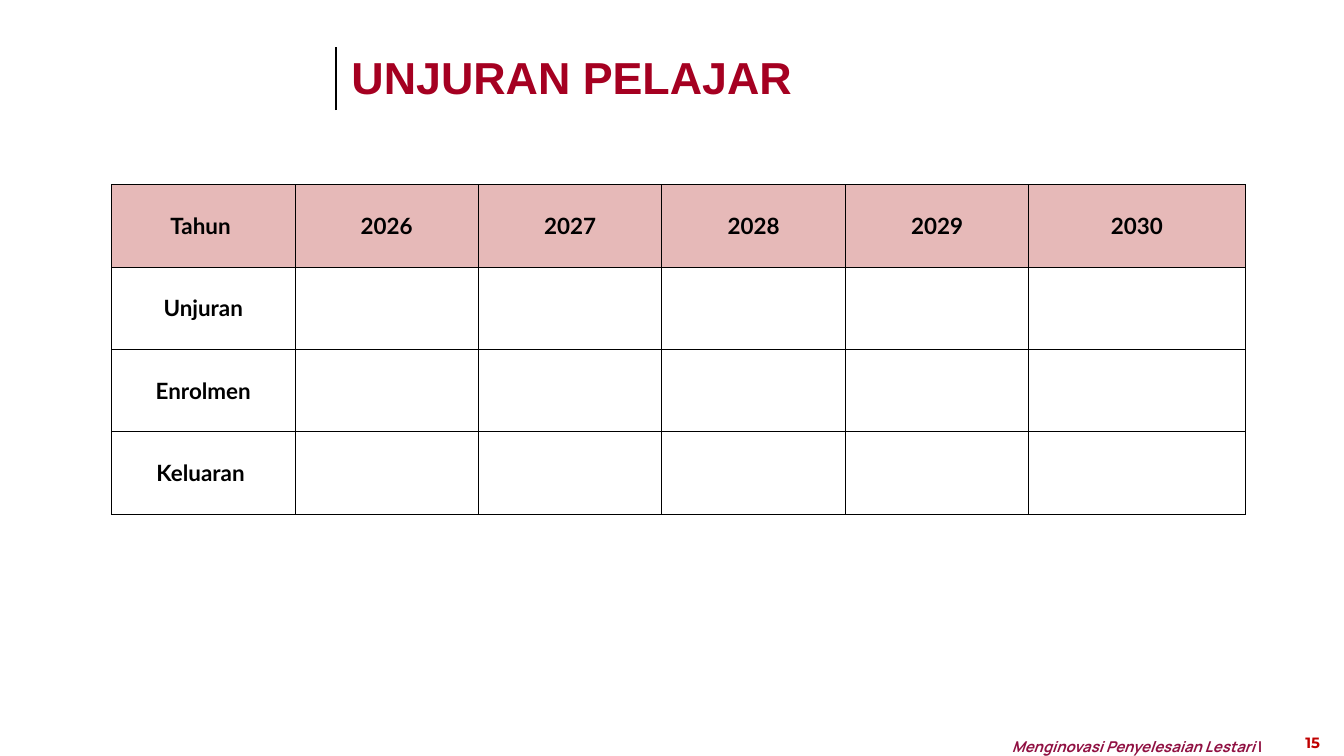
from lxml import etree
from pptx import Presentation
from pptx import util as u
from pptx.dml.color import RGBColor
from pptx.enum import shapes, text
from pptx.oxml import ns

BLACK = "000000"
HEADER_FILL = "E6B9B8"
TITLE_FONT = {"name": "Arial", "size": u.Pt(48), "bold": True}
TABLE_FONT = {"name": "Lato", "size": u.Pt(24), "bold": True}
MOTTO_FONT = {"name": "Manrope", "size": u.Pt(16), "bold": True, "italic": True}
NUMBER_FONT = {"name": "Montserrat", "size": u.Pt(16), "bold": True}

ROW_LABELS = ["Unjuran", "Enrolmen", "Keluaran "]
HEADERS = ["Tahun ", "2026", "2027", "2028", "2029", "2030"]
COLUMN_WIDTHS = [2.73] * 5 + [3.22]
TABLE_HEIGHT = 4.9


def rgb(color):
    return RGBColor.from_string(color)


def apply_font(font, values, color):
    for name, value in values.items():
        setattr(font, name, value)
    font.color.rgb = rgb(color)


def add_title(slide, words):
    title = slide.shapes.title
    title.left, title.top = u.Inches(5.13), u.Inches(0.69)
    title.width, title.height = u.Inches(12.78), u.Inches(1.25)
    frame = title.text_frame
    frame.auto_size = text.MSO_AUTO_SIZE.NONE
    frame.vertical_anchor = text.MSO_ANCHOR.TOP
    paragraph = frame.paragraphs[0]
    paragraph.alignment = text.PP_ALIGN.LEFT
    run = paragraph.add_run()
    run.text = words
    apply_font(run.font, TITLE_FONT, "A50021")


def add_rule(slide, start, end, color, width):
    line = slide.shapes.add_connector(
        shapes.MSO_CONNECTOR.STRAIGHT, *map(u.Inches, start + end))
    line.line.color.rgb = rgb(color)
    line.line.width = u.Pt(width)
    etree.SubElement(line._element.spPr, ns.qn("a:effectLst"))


def add_label(slide, box, words, font, color, **paragraph_format):
    """Add a one-line text box and return its text frame."""
    frame = slide.shapes.add_textbox(*map(u.Inches, box)).text_frame
    frame.word_wrap = True
    paragraph = frame.paragraphs[0]
    for name, value in paragraph_format.items():
        setattr(paragraph, name, value)
    run = paragraph.add_run()
    run.text = words
    apply_font(run.font, font, color)
    return frame


def add_motto(slide):
    frame = add_label(slide, (15.06, 10.87, 4.2, 0.38),
                      "Menginovasi Penyelesaian Lestari ",
                      MOTTO_FONT, "901042", line_spacing=1.4)
    for side in ("left", "right", "top", "bottom"):
        setattr(frame, f"margin_{side}", 0)
    bar = frame.paragraphs[0].add_run()
    bar.text = "|"
    apply_font(bar.font, {**MOTTO_FONT, "italic": False}, "901042")


def add_borders(cell, color):
    properties = cell._tc.get_or_add_tcPr()
    for side in "LRTB":
        border = etree.SubElement(properties, ns.qn(f"a:ln{side}"), w=str(u.Pt(1)))
        fill = etree.SubElement(border, ns.qn("a:solidFill"))
        etree.SubElement(fill, ns.qn("a:srgbClr"), val=color)


def format_cell(cell, words, fill):
    add_borders(cell, BLACK)
    if fill:
        cell.fill.solid()
        cell.fill.fore_color.rgb = rgb(fill)
    else:
        cell.fill.background()
    cell.vertical_anchor = text.MSO_ANCHOR.MIDDLE
    paragraph = cell.text_frame.paragraphs[0]
    paragraph.alignment = text.PP_ALIGN.CENTER
    if words:
        run = paragraph.add_run()
        run.text = words
        apply_font(run.font, TABLE_FONT, BLACK)


def add_projection_table(slide):
    rows = [HEADERS] + [[label] + [""] * (len(HEADERS) - 1) for label in ROW_LABELS]
    table = slide.shapes.add_table(
        len(rows), len(HEADERS), u.Inches(1.66), u.Inches(2.75),
        u.Inches(sum(COLUMN_WIDTHS)), u.Inches(TABLE_HEIGHT)).table
    table.horz_banding = False
    for column, width in zip(table.columns, COLUMN_WIDTHS):
        column.width = u.Inches(width)
    for index, words in enumerate(rows):
        table.rows[index].height = u.Inches(TABLE_HEIGHT / len(rows))
        for cell, word in zip(table.rows[index].cells, words):
            format_cell(cell, word, HEADER_FILL if index == 0 else None)


def main():
    presentation = Presentation()
    presentation.slide_width = u.Inches(20)
    presentation.slide_height = u.Inches(11.25)
    slide = presentation.slides.add_slide(presentation.slide_layouts[5])

    # Footer
    add_motto(slide)
    add_label(slide, (19.07, 10.87, 0.93, 0.37), "15", NUMBER_FONT, "C00000",
              alignment=text.PP_ALIGN.CENTER)

    # Heading with its upright rule
    add_rule(slide, (5, 1.64), (5, 0.7), BLACK, 3)
    add_title(slide, "UNJURAN PELAJAR")

    # Student projection by year
    add_projection_table(slide)

    presentation.save("out.pptx")


if __name__ == "__main__":
    main()
